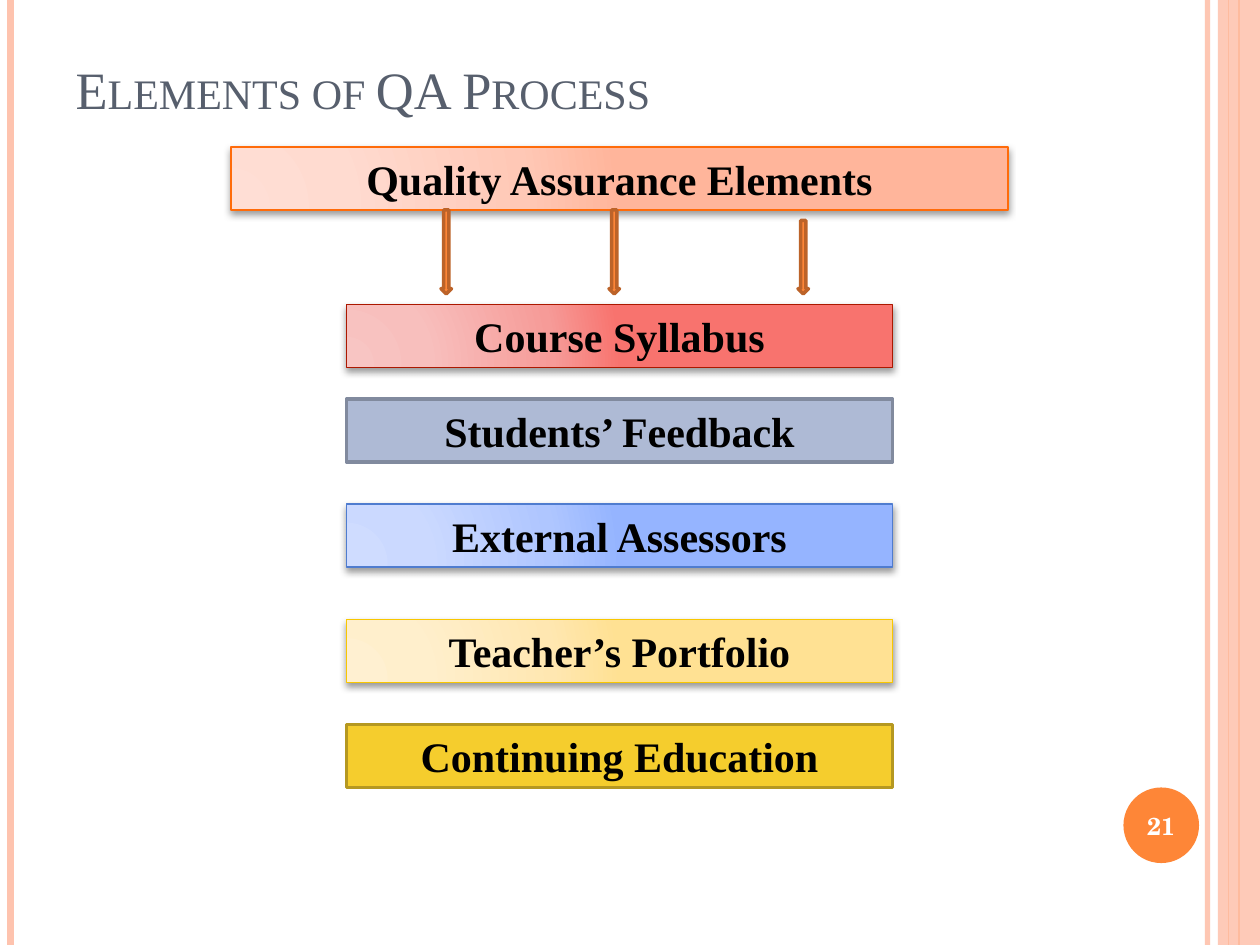
from lxml.etree import SubElement
from pptx import Presentation
from pptx.dml.color import RGBColor
from pptx.enum.shapes import MSO_CONNECTOR, MSO_SHAPE
from pptx.enum.text import MSO_ANCHOR, PP_ALIGN
from pptx.oxml import parse_xml
from pptx.oxml.ns import nsdecls, qn
from pptx.util import Pt

PX = 7620  # 120 px to the inch
SERIF = "Times New Roman"


def color(hex_string):
    return RGBColor.from_string(hex_string)


def add_box(kind, left, top, width, height, fill, line=None, line_width=1):
    shape = slide.shapes.add_shape(
        kind, left * PX, top * PX, width * PX, height * PX)
    shape.shadow.inherit = False
    shape.fill.solid()
    shape.fill.fore_color.rgb = color(fill)
    if line:
        shape.line.color.rgb = color(line)
        shape.line.width = Pt(line_width)
    else:
        shape.line.fill.background()
    return shape


presentation = Presentation()
presentation.slide_width = 1200 * PX
presentation.slide_height = 900 * PX
slide = presentation.slides.add_slide(presentation.slide_layouts[5])

# Side stripes: vertical lines and a translucent band
for x, line_color, width, opacity in [
    (1150, "FEC3AE", 3, 93),
    (10, "FEC3AE", 4.5, 100),
    (1180, "FE8637", 1.5, 100),
    (1170, "FE8637", 0.75, 100),
]:
    stripe = slide.shapes.add_connector(
        MSO_CONNECTOR.STRAIGHT, x * PX, 0, x * PX, 900 * PX)
    stripe.line.color.rgb = color(line_color)
    stripe.line.width = Pt(width)
    properties = stripe._element.spPr
    SubElement(properties, qn("a:effectLst"))
    if opacity < 100:
        rgb = properties.find(".//" + qn("a:srgbClr"))
        SubElement(rgb, qn("a:alpha"), val=str(opacity * 1000))

band = add_box(MSO_SHAPE.RECTANGLE, 1160, 0, 40, 900, "FEC3AE")
rgb = band._element.spPr.find(".//" + qn("a:srgbClr"))
SubElement(rgb, qn("a:alpha"), val="87000")

# Title
title = slide.shapes.title
title.left, title.top = 60 * PX, 36 * PX
title.width, title.height = 1080 * PX, 84 * PX
title.text_frame.text = "Elements of QA Process"
title.text_frame.vertical_anchor = MSO_ANCHOR.BOTTOM
paragraph = title.text_frame.paragraphs[0]
paragraph.alignment = PP_ALIGN.LEFT
paragraph.font.name = SERIF
paragraph.font.size = Pt(30)
paragraph.font.color.rgb = color("575F6D")
paragraph.runs[0]._r.get_or_add_rPr().set("cap", "small")

# Element bars: several fill colours make a radial gradient with a shadow
bars = [
    ("Quality Assurance Elements", 220, 140, 740,
     ["FFDED5", "FFDBD0", "FFC8B6", "FFB59B"], "FF6B0A"),
    ("Course Syllabus", 330, 290, 520,
     ["F8C5C3", "F8BFBD", "F69B98", "F8736E"], "AC1800"),
    ("Students’ Feedback", 330, 380, 520, ["AEBAD5"], "818A9E"),
    ("External Assessors", 330, 480, 520,
     ["CFDCFF", "CBD9FF", "AFC6FF", "95B4FF"], "4F7CCF"),
    ("Teacher’s Portfolio", 330, 590, 520,
     ["FFF0D1", "FFEFCC", "FFE7B1", "FFE193"], "F8C700"),
    ("Continuing Education", 330, 690, 520, ["F5CD2D"], "B59821"),
]
for label, left, top, width, fills, line in bars:
    is_gradient = len(fills) > 1
    bar = add_box(MSO_SHAPE.RECTANGLE, left, top, width, 60, fills[0], line,
                  1 if is_gradient else 2)
    if is_gradient:
        properties = bar._element.spPr
        stops = "".join(
            f'<a:gs pos="{position * 1000}"><a:srgbClr val="{stop}"/></a:gs>'
            for position, stop in zip((0, 30, 75, 100), fills))
        properties.replace(properties.find(qn("a:solidFill")), parse_xml(
            f'<a:gradFill {nsdecls("a")} rotWithShape="1">'
            f'<a:gsLst>{stops}</a:gsLst><a:path path="circle">'
            '<a:fillToRect l="5000" t="100000" r="120000" b="10000"/>'
            '</a:path></a:gradFill>'))
        properties.find(qn("a:effectLst")).append(parse_xml(
            f'<a:outerShdw {nsdecls("a")} blurRad="50800" dist="25400" '
            'dir="5400000" rotWithShape="0"><a:srgbClr val="000000">'
            '<a:alpha val="40000"/></a:srgbClr></a:outerShdw>'))
    bar.text_frame.text = label
    bar.text_frame.vertical_anchor = MSO_ANCHOR.TOP
    paragraph = bar.text_frame.paragraphs[0]
    paragraph.alignment = PP_ALIGN.CENTER
    paragraph.font.name = SERIF
    paragraph.font.size = Pt(24)
    paragraph.font.bold = True
    paragraph.font.color.rgb = color("000000")

# Arrows from the heading bar, all ending at the same height
for left, top in [(580, 200), (420, 200), (760, 210)]:
    add_box(MSO_SHAPE.DOWN_ARROW, left, top, 10, 280 - top,
            "FE8637", "BC6329", 2)

# Slide number
badge = add_box(MSO_SHAPE.OVAL, 1070, 750, 72, 72, "FE8637")
badge.text_frame.text = "21"
badge.text_frame.vertical_anchor = MSO_ANCHOR.MIDDLE
badge.text_frame.word_wrap = False
paragraph = badge.text_frame.paragraphs[0]
paragraph.alignment = PP_ALIGN.CENTER
paragraph.font.name = "TeX Gyre Schola"
paragraph.font.size = Pt(14)
paragraph.font.bold = True
paragraph.font.color.rgb = color("FFFFFF")

presentation.save("out.pptx")
